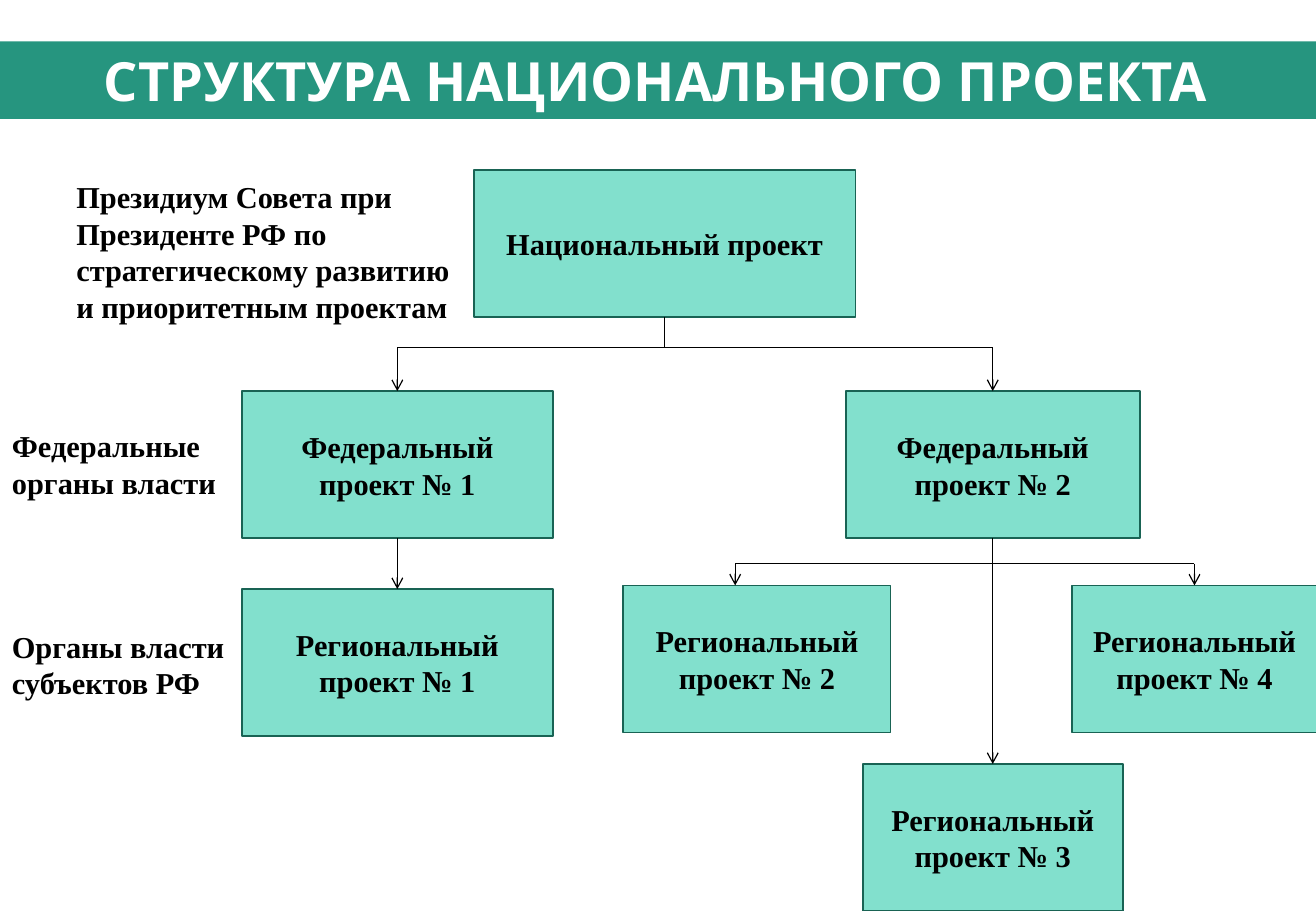
from dataclasses import dataclass

from lxml import etree
from pptx import Presentation, util as u
from pptx.dml.color import RGBColor
from pptx.enum import shapes, text
from pptx.oxml.ns import qn

PX = 9144  # EMU in one px, 100 px to the inch
WIDE, HIGH = 1083, 750
TIER = 121  # height of every project box
COLORS = {
    "banner": "26957F",
    "box": "82E0CD",
    "edge": "196354",
    "ink": "000000",
    "white": "FFFFFF",
}
SERIF = "Times New Roman"


@dataclass(frozen=True)
class Box:
    key: str
    x: int
    y: int
    w: int
    words: str


@dataclass(frozen=True)
class Label:
    x: int
    y: int
    w: int
    h: int
    words: str


@dataclass(frozen=True)
class Wire:
    """Each end is a box key or a point in px."""
    start: str | tuple[int, int]
    end: str | tuple[int, int]
    arrow: bool = True


BOXES = [
    Box("fed2", 696, 322, 242, "Федеральный проект № 2"),
    Box("fed1", 199, 322, 256, "Федеральный проект № 1"),
    Box("nation", 390, 140, 314, "Национальный проект"),
    Box("reg1", 199, 485, 256, "Региональный проект № 1"),
    Box("reg4", 882, 482, 202, "Региональный проект № 4"),
    Box("reg2", 513, 482, 220, "Региональный проект № 2"),
    Box("reg3", 710, 629, 214, "Региональный проект № 3"),
]
LABELS = [
    Label(0, 347, 240, 71, "Федеральные органы власти"),
    Label(0, 512, 240, 71, "Органы власти субъектов РФ"),
    Label(53, 142, 337, 131, "Президиум Совета при Президенте РФ по "
          "стратегическому развитию и приоритетным проектам"),
]
WIRES = [
    Wire("nation", (547, 286), arrow=False),
    Wire((327, 286), (817, 286), arrow=False),
    Wire((327, 286), "fed1"),
    Wire((817, 286), "fed2"),
    Wire("fed1", "reg1"),
    Wire("fed2", "reg3"),
    Wire((605, 464), (983, 464), arrow=False),
    Wire((605, 464), (605, 482)),
    Wire((983, 464), "reg4"),
]


def px(*vals: int) -> list[u.Emu]:
    return [u.Emu(val * PX) for val in vals]


def color(name: str) -> RGBColor:
    return RGBColor.from_string(COLORS[name])


def write(shape, words: str, size: int = 18, face: str = SERIF,
          ink: str = "ink", align=text.PP_ALIGN.CENTER) -> None:
    frame = shape.text_frame
    frame.word_wrap = True
    para = frame.paragraphs[0]
    para.alignment = align
    run = para.add_run()
    run.text = words
    run.font.size = u.Pt(size)
    run.font.name = face
    run.font.bold = True
    run.font.color.rgb = color(ink)


def add_rect(slide, x: int, y: int, w: int, h: int, fill: str):
    rect = slide.shapes.add_shape(shapes.MSO_SHAPE.RECTANGLE, *px(x, y, w, h))
    rect.shadow.inherit = False
    rect.fill.solid()
    rect.fill.fore_color.rgb = color(fill)
    return rect


def add_banner(slide) -> None:
    rect = add_rect(slide, -4, 34, WIDE + 4, 64, "banner")
    rect.line.fill.background()
    rect.text_frame.vertical_anchor = text.MSO_ANCHOR.TOP
    rect.text_frame.auto_size = text.MSO_AUTO_SIZE.SHAPE_TO_FIT_TEXT
    write(rect, "СТРУКТУРА НАЦИОНАЛЬНОГО ПРОЕКТА", 32, "League Spartan", "white")


def add_box(slide, box: Box):
    rect = add_rect(slide, box.x, box.y, box.w, TIER, "box")
    rect.line.color.rgb = color("edge")
    rect.line.width = u.Pt(1)
    rect.text_frame.vertical_anchor = text.MSO_ANCHOR.MIDDLE
    write(rect, box.words)
    return rect


def add_label(slide, label: Label) -> None:
    area = slide.shapes.add_textbox(*px(label.x, label.y, label.w, label.h))
    area.text_frame.auto_size = text.MSO_AUTO_SIZE.SHAPE_TO_FIT_TEXT
    write(area, label.words, align=text.PP_ALIGN.LEFT)


def add_wire(slide, wire: Wire, rects: dict) -> None:
    """Run from the bottom of the start box to the top of the end box."""
    first = (0, 0) if isinstance(wire.start, str) else wire.start
    last = (0, 0) if isinstance(wire.end, str) else wire.end
    line = slide.shapes.add_connector(
        shapes.MSO_CONNECTOR.STRAIGHT, *px(*first, *last))
    if isinstance(wire.start, str):
        line.begin_connect(rects[wire.start], 2)
    if isinstance(wire.end, str):
        line.end_connect(rects[wire.end], 0)
    line.line.color.rgb = color("ink")
    line.line.width = u.Pt(0.75)
    props = line._element.spPr
    if wire.arrow:
        etree.SubElement(props.find(qn("a:ln")), qn("a:tailEnd"), type="arrow")
    etree.SubElement(props, qn("a:effectLst"))


def main() -> None:
    deck = Presentation()
    deck.slide_width, deck.slide_height = px(WIDE, HIGH)
    slide = deck.slides.add_slide(deck.slide_layouts[6])
    add_banner(slide)
    rects = {box.key: add_box(slide, box) for box in BOXES}
    for label in LABELS:
        add_label(slide, label)
    for wire in WIRES:
        add_wire(slide, wire, rects)
    deck.save("out.pptx")


if __name__ == "__main__":
    main()
